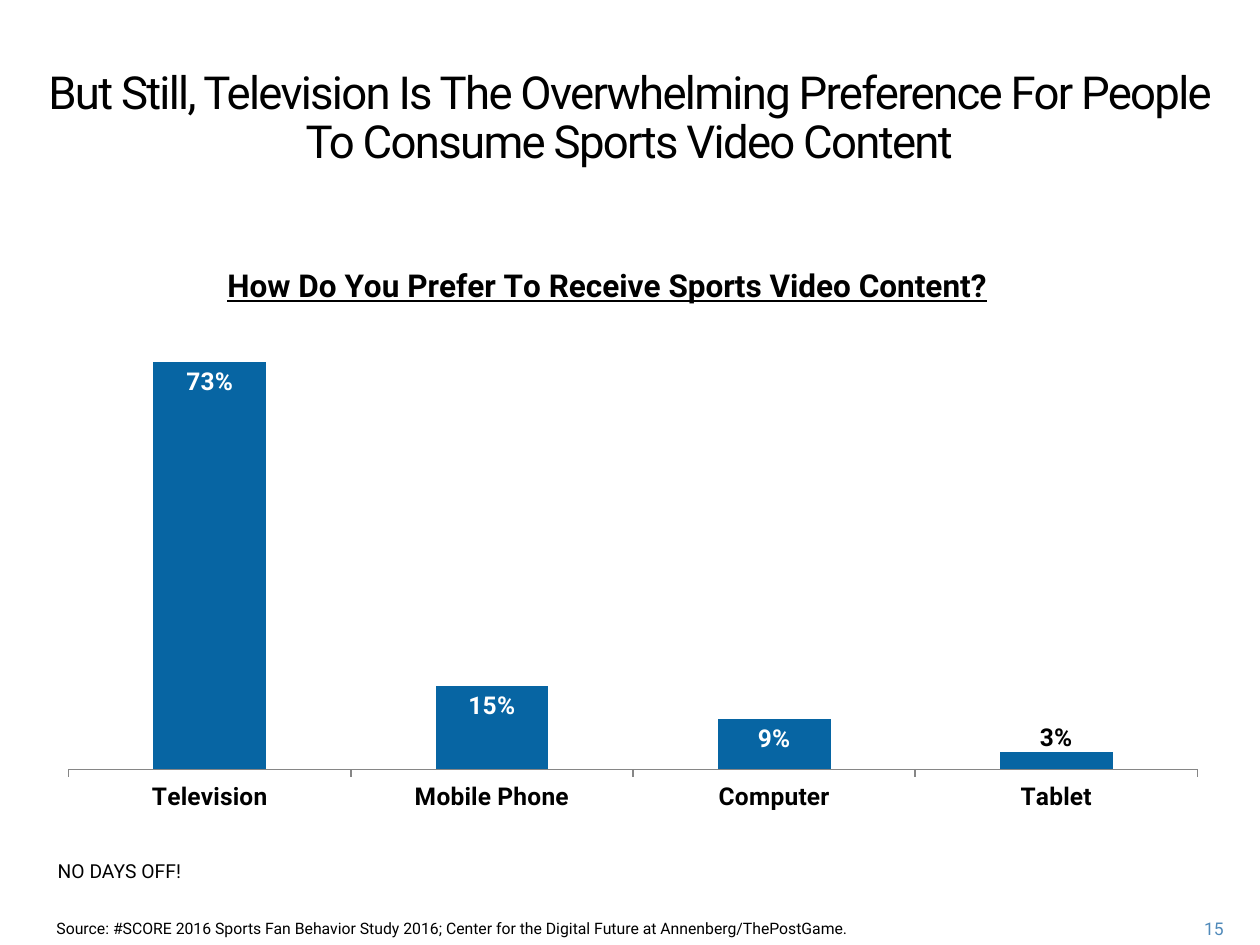
from dataclasses import dataclass

import lxml.etree
import pptx
import pptx.chart.data
import pptx.dml.color
import pptx.enum.chart
import pptx.enum.text
import pptx.oxml
import pptx.oxml.ns
import pptx.util
from pptx.util import Inches, Pt

ALIGN = pptx.enum.text.PP_ALIGN
RGB = pptx.dml.color.RGBColor
qn = pptx.oxml.ns.qn


@dataclass(frozen=True)
class Theme:
    font: str = "Roboto"
    black: str = "000000"
    white: str = "FFFFFF"
    bar: str = "0765A3"
    axis: str = "868686"
    page: str = "508ABA"
    headline_size: int = 26
    chart_title_size: int = 18
    label_size: int = 14
    remark_size: int = 11
    page_size: int = 10
    source_size: int = 9


THEME = Theme()


@dataclass(frozen=True)
class Caption:
    text: str
    left: float
    top: float
    width: float
    height: float
    size: int
    color: str = THEME.black
    align: ALIGN = ALIGN.LEFT
    line_spacing: float | None = None
    tracking: float = 0


CAPTIONS = [
    Caption("But Still, Television Is The Overwhelming Preference For People "
            "To Consume Sports Video Content", 0.18, 0.5, 9.63, 0.68,
            THEME.headline_size, align=ALIGN.CENTER, line_spacing=28, tracking=-1),
    Caption("NO DAYS OFF!", 0.36, 6.77, 1.88, 0.47, THEME.remark_size),
    Caption("Source: #SCORE 2016 Sports Fan Behavior Study 2016; Center for the "
            "Digital Future at Annenberg/ThePostGame.", 0.35, 7.24, 7.83, 0.23,
            THEME.source_size),
    Caption("15", 9.2, 7.24, 0.61, 0.25, THEME.page_size, THEME.page, ALIGN.RIGHT),
]

PREFERENCES = {"Television": 0.73, "Mobile Phone": 0.15, "Computer": 0.09, "Tablet": 0.03}


def style_font(font, size: int, color: str, bold: bool = False) -> None:
    font.name = THEME.font
    font.size = Pt(size)
    font.bold = bold
    font.color.rgb = RGB.from_string(color)


def add_caption(slide, caption: Caption) -> None:
    box = slide.shapes.add_textbox(Inches(caption.left), Inches(caption.top),
                                   Inches(caption.width), Inches(caption.height))
    box.text_frame.word_wrap = True
    paragraph = box.text_frame.paragraphs[0]
    run = paragraph.add_run()
    run.text = caption.text
    paragraph.alignment = caption.align
    if caption.line_spacing:
        paragraph.line_spacing = Pt(caption.line_spacing)
    style_font(paragraph.font, caption.size, caption.color)
    if caption.tracking:
        run.font._element.set("spc", str(int(caption.tracking * 100)))


def manual_layout(**settings: str | float):
    """Build a c:layout element from its settings, given in schema order."""
    layout = pptx.oxml.parse_xml(
        f'<c:layout xmlns:c="{pptx.oxml.ns.nsdecls("c").split(chr(34))[1]}"/>')
    manual = lxml.etree.SubElement(layout, qn("c:manualLayout"))
    for tag, value in settings.items():
        lxml.etree.SubElement(manual, qn(f"c:{tag}")).set("val", str(value))
    return layout


def place(parent, layout, after: str | None = None) -> None:
    """Replace the parent's layout, putting it first or after a given child."""
    for old in parent.findall(qn("c:layout")):
        parent.remove(old)
    position = 0 if after is None else parent.index(parent.find(qn(after))) + 1
    parent.insert(position, layout)


def add_preference_chart(slide) -> None:
    data = pptx.chart.data.CategoryChartData(number_format="0%")
    data.categories = list(PREFERENCES)
    data.add_series("Series 1", list(PREFERENCES.values()))
    chart = slide.shapes.add_chart(
        pptx.enum.chart.XL_CHART_TYPE.COLUMN_STACKED,
        Inches(0.36), Inches(1.92), Inches(9.33), Inches(4.6), data).chart
    style_font(chart.font, THEME.remark_size, THEME.black)
    chart.has_legend = False

    heading = chart.chart_title.text_frame.paragraphs[0]
    heading.add_run().text = "How Do You Prefer To Receive Sports Video Content?"
    style_font(heading.font, THEME.chart_title_size, THEME.black, bold=True)
    heading.font.underline = True
    chart.chart_title.include_in_layout = False
    place(chart.chart_title._element,
          manual_layout(xMode="edge", yMode="edge", x=0.15, y=0.03), after="c:tx")
    place(chart._chartSpace.chart.plotArea,
          manual_layout(layoutTarget="inner", xMode="edge", yMode="edge",
                        x=0.02, y=0.14, w=0.96, h=0.77))

    values = chart.value_axis
    values.visible = False
    values.has_major_gridlines = False
    values.minimum_scale, values.maximum_scale = 0, 0.8
    categories = chart.category_axis
    categories.major_tick_mark = pptx.enum.chart.XL_TICK_MARK.OUTSIDE
    categories.format.line.color.rgb = RGB.from_string(THEME.axis)
    categories.format.line.width = Pt(0.75)
    style_font(categories.tick_labels.font, THEME.label_size, THEME.black, bold=True)

    plot = chart.plots[0]
    plot.gap_width, plot.overlap = 150, 100
    plot.vary_by_categories = False
    bars = plot.series[0]
    bars.format.fill.solid()
    bars.format.fill.fore_color.rgb = RGB.from_string(THEME.bar)

    inside_end = pptx.enum.chart.XL_LABEL_POSITION.INSIDE_END
    labels = bars.data_labels
    labels.show_value = True
    labels.number_format, labels.number_format_is_linked = "0%", False
    labels.position = inside_end
    style_font(labels.font, THEME.label_size, THEME.white, bold=True)

    # The tablet bar is too low to hold its label, so the label sits above it.
    tablet_index = list(PREFERENCES).index("Tablet")
    tablet_label = bars.points[tablet_index].data_label
    style_font(tablet_label.font, THEME.label_size, THEME.black, bold=True)
    tablet_label.position = inside_end
    place(labels._element.find(qn("c:dLbl")), manual_layout(x=0, y=-0.06), after="c:idx")


def main() -> None:
    deck = pptx.Presentation()
    deck.slide_width, deck.slide_height = Inches(10), Inches(7.5)
    slide = deck.slides.add_slide(deck.slide_layouts[6])
    add_preference_chart(slide)
    for caption in CAPTIONS:
        add_caption(slide, caption)
    deck.save("out.pptx")


if __name__ == "__main__":
    main()
